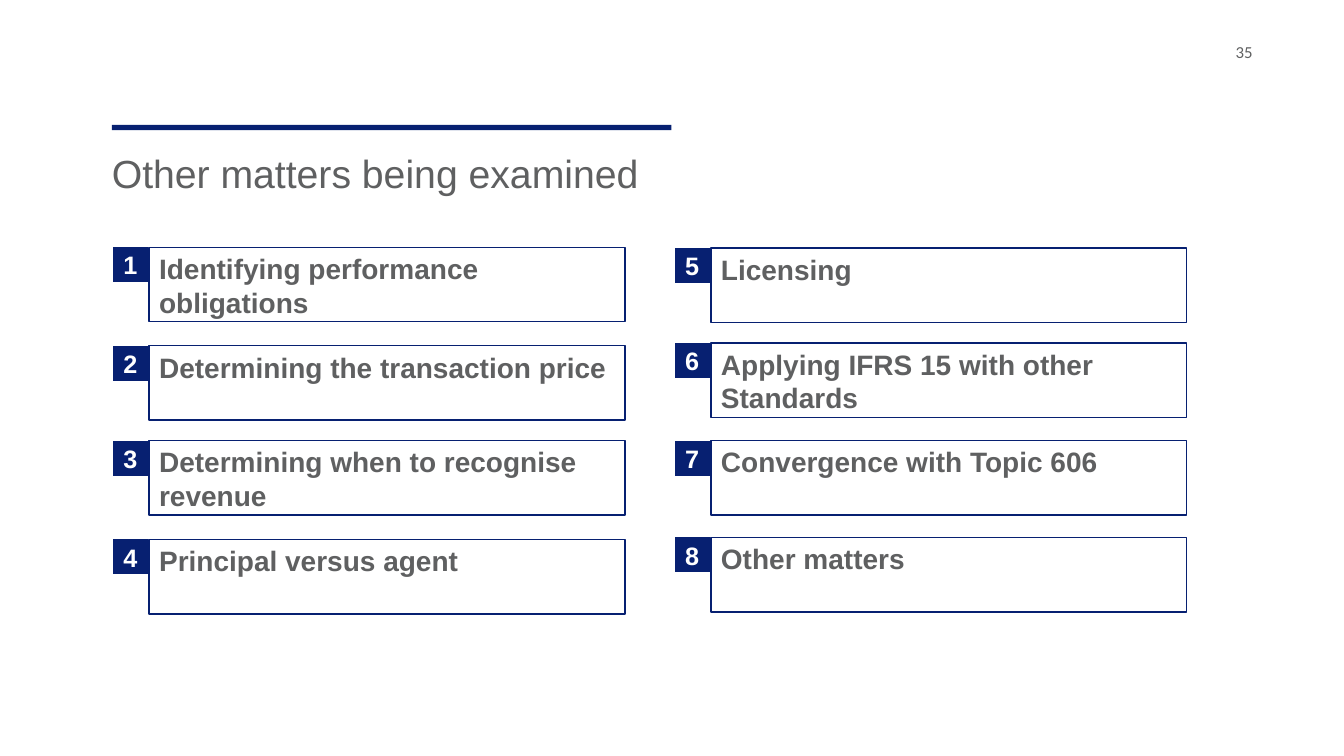
from pptx import Presentation
from pptx.dml.color import RGBColor
from pptx.enum.shapes import MSO_SHAPE
from pptx.enum.text import MSO_ANCHOR, PP_ALIGN
from pptx.util import Cm, Pt

NAVY, GREY, WHITE = "072071", "5F6061", "FFFFFF"
NO_MARGINS = dict.fromkeys(
    ("margin_left", "margin_top", "margin_right", "margin_bottom"), 0)

# Each column: left edge, then (top, matter) from first to last
COLUMNS = [
    (2.79, [(6.18, "Identifying performance obligations"),
            (8.66, "Determining the transaction price"),
            (11.05, "Determining when to recognise revenue"),
            (13.54, "Principal versus agent")]),
    (16.95, [(6.2, "Licensing"),
             (8.59, "Applying IFRS 15 with other Standards"),
             (11.05, "Convergence with Topic 606"),
             (13.49, "Other matters")]),
]


def colour(hex_code):
    return RGBColor.from_string(hex_code)


def apply(target, formats):
    for name, value in formats.items():
        setattr(target, name, value)


def write(shape, text, font, frame=None, paragraph=None):
    text_frame = shape.text_frame
    apply(text_frame, {"word_wrap": True, **(frame or {})})
    line = text_frame.paragraphs[0]
    apply(line, paragraph or {})
    run = line.add_run()
    run.text = text
    hex_code = font["color"]
    apply(run.font, {k: v for k, v in font.items() if k != "color"})
    run.font.color.rgb = colour(hex_code)


def add_rectangle(slide, box, fill, outline=None, weight=1):
    rectangle = slide.shapes.add_shape(MSO_SHAPE.RECTANGLE, *map(Cm, box))
    rectangle.shadow.inherit = False
    rectangle.fill.solid()
    rectangle.fill.fore_color.rgb = colour(fill)
    if outline:
        rectangle.line.color.rgb = colour(outline)
        rectangle.line.width = Pt(weight)
    else:
        rectangle.line.fill.background()
    return rectangle


def add_heading(slide, left, top, width):
    # Rule above the title
    add_rectangle(slide, (left, top, 14.1, 0.13), NAVY)
    title = slide.shapes.add_textbox(
        Cm(left), Cm(top + 0.61), Cm(width), Cm(1.45))
    write(title, "Other matters being examined",
          {"name": "Arial", "size": Pt(28), "color": GREY}, NO_MARGINS)


def add_page_number(slide, left, top, width, height):
    page_number = slide.shapes.add_textbox(*map(Cm, (left, top, width, height)))
    write(page_number, "35",
          {"name": "Calibri", "size": Pt(12), "color": GREY}, NO_MARGINS)


def add_matter(slide, left, top, width, number, matter):
    # Numbered badge
    badge_side = 0.99
    badge = add_rectangle(slide, (left, top, badge_side, badge_side),
                          NAVY, WHITE, 3)
    write(badge, str(number),
          {"name": "Arial", "size": Pt(18), "bold": True, "color": WHITE},
          {"vertical_anchor": MSO_ANCHOR.MIDDLE},
          {"alignment": PP_ALIGN.CENTER})
    # Framed wording beside it
    panel = add_rectangle(
        slide, (left + badge_side - 0.02, top + 0.05, width - badge_side, 1.88),
        WHITE, NAVY)
    write(panel, matter,
          {"name": "Arial", "size": Pt(20), "bold": True, "color": GREY},
          {"vertical_anchor": MSO_ANCHOR.TOP, "margin_top": Cm(0.11),
           "margin_bottom": 0},
          {"alignment": PP_ALIGN.LEFT})


def add_matters(slide, columns, width):
    number = 0
    for left, matters in columns:
        for top, matter in matters:
            number += 1
            add_matter(slide, left, top, width, number, matter)


def main():
    deck = Presentation()
    apply(deck, {"slide_width": Cm(33.87), "slide_height": Cm(19.05)})
    slide = deck.slides.add_slide(deck.slide_layouts[6])
    add_heading(slide, 2.82, 3.15, 28.3)
    add_page_number(slide, 31.14, 1.04, 1.7, 0.74)
    add_matters(slide, COLUMNS, 12.98)
    deck.save("out.pptx")


if __name__ == "__main__":
    main()
